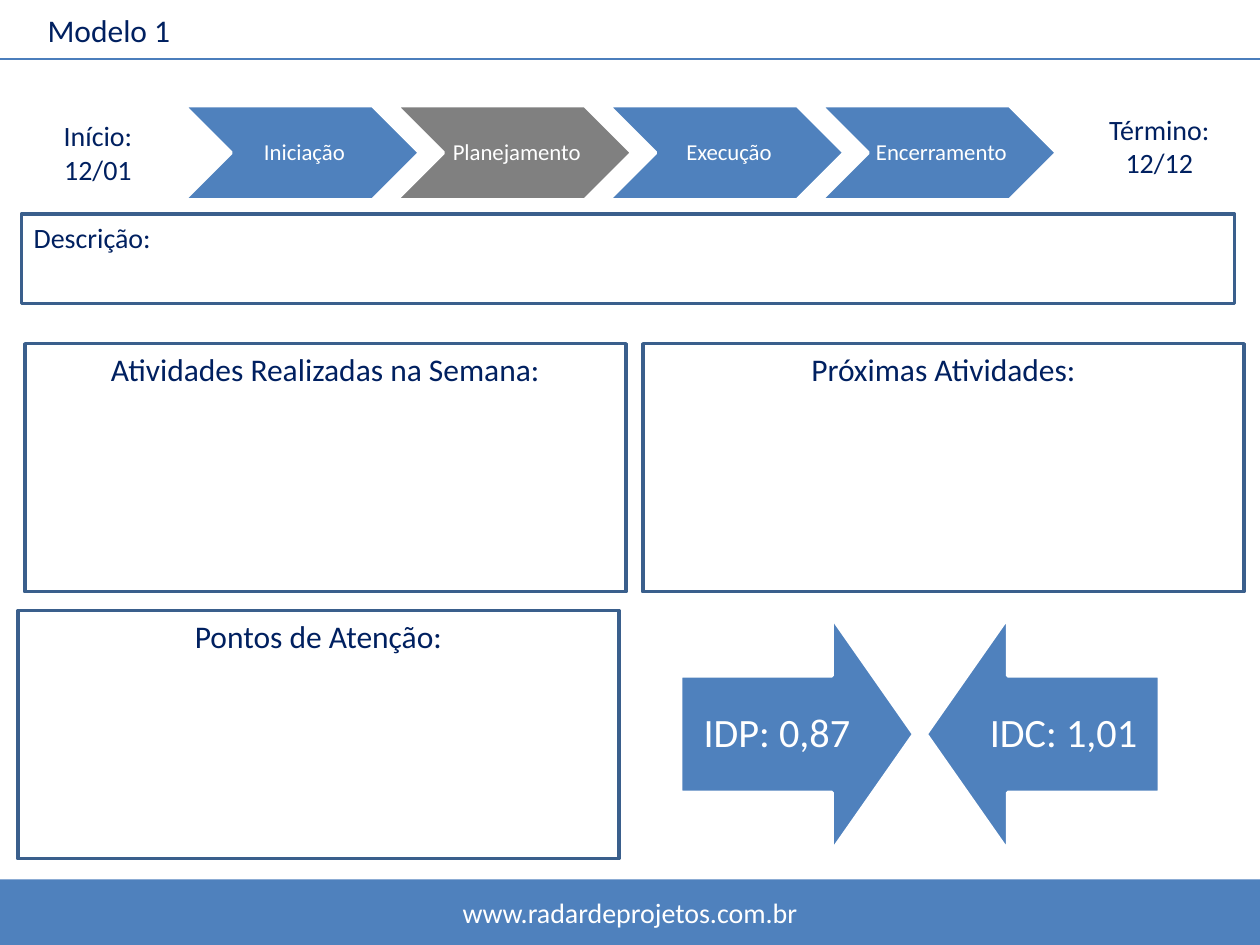
import pptx
import pptx.util
import pptx.dml.color
import pptx.enum.shapes
import pptx.enum.text
import pptx.oxml.ns
import lxml.etree

Cm, Pt = pptx.util.Cm, pptx.util.Pt
RGBColor = pptx.dml.color.RGBColor
SHAPE = pptx.enum.shapes.MSO_SHAPE
ALIGN = pptx.enum.text.PP_ALIGN
ANCHOR = pptx.enum.text.MSO_ANCHOR

BLUE = RGBColor(0x4F, 0x81, 0xBD)
RULE_BLUE = RGBColor(0x4B, 0x7E, 0xBC)
BORDER = RGBColor(0x3A, 0x5F, 0x8C)
NAVY = RGBColor(0x00, 0x20, 0x60)
GREY = RGBColor(0x80, 0x80, 0x80)
WHITE = RGBColor(0xFF, 0xFF, 0xFF)

SLIDE_W, SLIDE_H = 25.4, 19.05
FOOTER = "www.radardeprojetos.com.br"
FOOTER_TOP = 17.73
TITLE = "Modelo 1"
PHASES = [("Iniciação", BLUE), ("Planejamento", GREY),
          ("Execução", BLUE), ("Encerramento", BLUE)]
# text, left, top, width
DATES = [("Início: 12/01", 0.5, 2.27, 2.95),
         ("Término: 12/12", 21.87, 2.13, 3)]
# text, left, top, width, height, size, alignment
PANELS = [
    ("Atividades Realizadas na Semana:", 0.5, 6.93, 12.12, 5, 18, ALIGN.CENTER),
    ("Descrição:", 0.43, 4.32, 24.46, 1.8, 16, ALIGN.LEFT),
    ("Próximas Atividades:", 12.96, 6.93, 12.12, 5, 18, ALIGN.CENTER),
    ("Pontos de Atenção:", 0.36, 12.31, 12.12, 5, 18, ALIGN.CENTER),
]
# text, arrow left, rotation, text left
INDICES = [("IDP: 0,87", 13.72, 270, 13.72),
           ("IDC: 1,01", 18.67, 90, 19.5)]

CHEVRON_LEFT, CHEVRON_TOP, CHEVRON_W, CHEVRON_H = 3.71, 2.13, 4.75, 1.9
CHEVRON_STEP = 4.28
ARROW_TOP, ARROW_SIZE = 12.45, 4.7
INDEX_W, INDEX_H = 3.89, 2.36
LABEL_INSETS = (0.15, 0.05, 0.05, 0.05)
INDEX_INSETS = (0.45,) * 4


def write(sp, text, size=16, color=NAVY, align=ALIGN.CENTER,
          anchor=ANCHOR.TOP, insets=(0.25, 0.13, 0.25, 0.13), spacing=None):
    tf = sp.text_frame
    tf.word_wrap = True
    tf.vertical_anchor = anchor
    (tf.margin_left, tf.margin_top,
     tf.margin_right, tf.margin_bottom) = map(Cm, insets)
    p = tf.paragraphs[0]
    p.alignment = align
    if spacing:
        p.line_spacing = spacing
    r = p.add_run()
    r.text = text
    r.font.name = "Calibri"
    r.font.size = Pt(size)
    r.font.color.rgb = color


def add_shape(s, kind, box, fill, line=None):
    sp = s.shapes.add_shape(kind, *map(Cm, box))
    sp.shadow.inherit = False
    sp.fill.solid()
    sp.fill.fore_color.rgb = fill
    if line is None:
        sp.line.fill.background()
    else:
        sp.line.color.rgb = line
        sp.line.width = Pt(2)
    return sp


def add_text(s, text, box, **style):
    write(s.shapes.add_textbox(*map(Cm, box)), text, **style)


def add_frame(s):
    """Footer band, rule under the title, and the title."""
    footer = add_shape(s, SHAPE.RECTANGLE,
                       (0, FOOTER_TOP, SLIDE_W, SLIDE_H - FOOTER_TOP), BLUE)
    write(footer, FOOTER, color=WHITE, anchor=ANCHOR.MIDDLE)
    rule = s.shapes.add_connector(pptx.enum.shapes.MSO_CONNECTOR.STRAIGHT,
                                  Cm(0), Cm(1.19), Cm(SLIDE_W), Cm(1.19))
    rule.line.color.rgb = RULE_BLUE
    rule.line.width = Pt(0.75)
    lxml.etree.SubElement(rule._element.spPr, pptx.oxml.ns.qn("a:effectLst"))
    add_text(s, TITLE, (0.71, 0.1, 13.59, 1.02), size=18, align=ALIGN.LEFT)


def add_phases(s):
    for i, (name, fill) in enumerate(PHASES):
        left = CHEVRON_LEFT + i * CHEVRON_STEP
        add_shape(s, SHAPE.CHEVRON,
                  (left, CHEVRON_TOP, CHEVRON_W, CHEVRON_H), fill, WHITE)
        inset = CHEVRON_H / 2
        add_text(s, name,
                 (left + inset, CHEVRON_TOP, CHEVRON_W - 2 * inset, CHEVRON_H),
                 size=13, color=WHITE, anchor=ANCHOR.MIDDLE,
                 insets=LABEL_INSETS, spacing=0.9)


def add_indices(s):
    text_top = ARROW_TOP + (ARROW_SIZE - INDEX_H) / 2
    for text, left, rotation, text_left in INDICES:
        arrow = add_shape(s, SHAPE.DOWN_ARROW,
                          (left, ARROW_TOP, ARROW_SIZE, ARROW_SIZE), BLUE, WHITE)
        arrow.adjustments[0] = 0.5
        arrow.adjustments[1] = 0.35
        arrow.rotation = rotation
        add_text(s, text, (text_left, text_top, INDEX_W, INDEX_H),
                 size=23, color=WHITE, anchor=ANCHOR.MIDDLE,
                 insets=INDEX_INSETS, spacing=0.9)


def main():
    prs = pptx.Presentation()
    prs.slide_width, prs.slide_height = Cm(SLIDE_W), Cm(SLIDE_H)
    s = prs.slides.add_slide(prs.slide_layouts[6])
    add_frame(s)
    add_phases(s)
    for text, left, top, width in DATES:
        add_text(s, text, (left, top, width, 1.63))
    for text, left, top, width, height, size, align in PANELS:
        panel = add_shape(s, SHAPE.RECTANGLE, (left, top, width, height),
                          WHITE, BORDER)
        write(panel, text, size=size, align=align)
    add_indices(s)
    prs.save("out.pptx")


if __name__ == "__main__":
    main()
